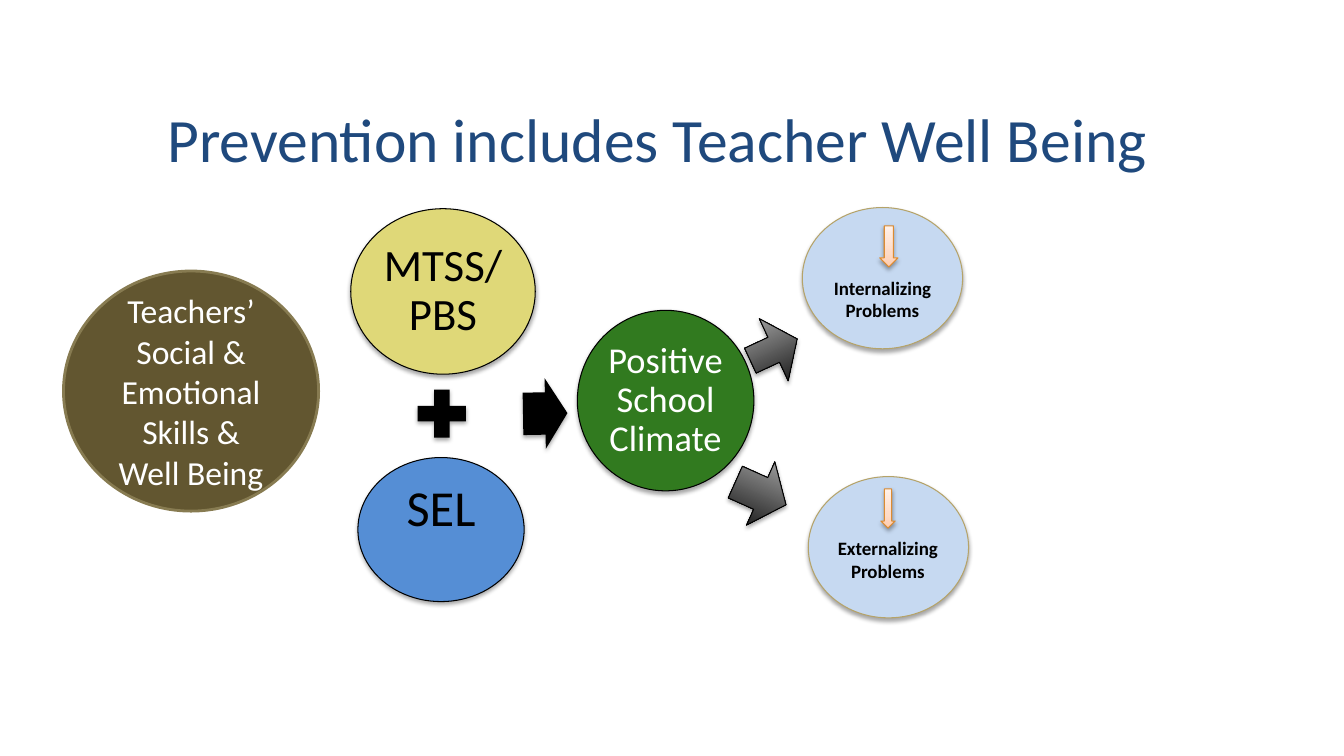
"""Build the slide on prevention and teacher well being."""
import copy

import pptx
import pptx.dml.color
import pptx.enum.shapes
import pptx.enum.text
import pptx.oxml
import pptx.oxml.ns
import pptx.util

Cm = pptx.util.Cm
Pt = pptx.util.Pt
RGB = pptx.dml.color.RGBColor
KIND = pptx.enum.shapes.MSO_SHAPE
ANCHOR = pptx.enum.text.MSO_ANCHOR
CENTER = pptx.enum.text.PP_ALIGN.CENTER

NAVY = RGB(0x1F, 0x49, 0x7D)
BLACK = RGB(0, 0, 0)
WHITE = RGB(255, 255, 255)
GREY = RGB(0xBD, 0xBD, 0xBD)
YELLOW = RGB(0xDF, 0xD8, 0x78)
BLUE = RGB(0x55, 0x8E, 0xD5)
GREEN = RGB(0x31, 0x7A, 0x1F)
PALE = RGB(0xC6, 0xD9, 0xF1)
SAND = RGB(0xB5, 0xA3, 0x69)
BROWN = RGB(0x62, 0x56, 0x30)
KHAKI = RGB(0x87, 0x7B, 0x51)
ORANGE = RGB(0xDC, 0x8B, 0x31)
SMOKE = [(0, BLACK), (1, GREY)]
PEACH = [(0, RGB(0xFF, 0xCC, 0xAF)), (0.35, RGB(0xFF, 0xDB, 0xC6)),
         (1, RGB(0xFF, 0xF1, 0xE9))]
SHADOW = (
    f'<a:outerShdw {pptx.oxml.ns.nsdecls("a")} blurRad="39370" dist="22860" '
    'dir="5400000" rotWithShape="0"><a:srgbClr val="000000">'
    '<a:alpha val="35000"/></a:srgbClr></a:outerShdw>')


def draw(kind, box, fill, line=None, width=0.75, shade=True):
    shape = slide.shapes.add_shape(kind, *map(Cm, box))
    if isinstance(fill, list):
        shape.fill.gradient()
        shape.fill.gradient_angle = 90
        stops = shape._element.spPr.find(".//" + pptx.oxml.ns.qn("a:gsLst"))
        for _ in fill[2:]:
            stops.append(copy.deepcopy(stops[-1]))
        for stop, (place, color) in zip(shape.fill.gradient_stops, fill):
            stop.position = place
            stop.color.rgb = color
    else:
        shape.fill.solid()
        shape.fill.fore_color.rgb = fill
    if line is None:
        shape.line.fill.background()
    else:
        shape.line.color.rgb = line
        shape.line.width = Pt(width)
    shape.shadow.inherit = False
    if shade:
        effect = shape._element.spPr.find(pptx.oxml.ns.qn("a:effectLst"))
        effect.append(pptx.oxml.parse_xml(SHADOW))
    return shape


def write(shape, text, size, color, inset=0.25, space=1.0, bold=False):
    frame = shape.text_frame
    frame.word_wrap = True
    frame.margin_left = frame.margin_right = Cm(inset)
    frame.margin_top = frame.margin_bottom = Cm(min(inset, 0.13))
    frame.text = text
    para = frame.paragraphs[0]
    para.alignment = CENTER
    para.line_spacing = space
    para.font.size = Pt(size)
    para.font.name = "Calibri"
    para.font.bold = bold
    para.font.color.rgb = color
    return frame


deck = pptx.Presentation()
deck.slide_width = Cm(33.87)
deck.slide_height = Cm(19.05)
slide = deck.slides.add_slide(deck.slide_layouts[5])

title = slide.shapes.title
title.left, title.top, title.width, title.height = map(
    Cm, (1.6, 1.63, 29.95, 3.68))
write(title, "Prevention includes Teacher Well Being", 44, NAVY)
title.text_frame.vertical_anchor = ANCHOR.MIDDLE

causes = [
    ("MTSS/PBS", (8.84, 5.26, 4.65, 4.17), YELLOW, BLACK, 32, ANCHOR.MIDDLE),
    ("SEL", (9.02, 11.53, 4.19, 3.63), BLUE, BLACK, 36, ANCHOR.TOP),
    ("Positive School Climate", (14.55, 7.82, 4.45, 4.55), GREEN, WHITE, 26,
     ANCHOR.MIDDLE),
]
for text, box, fill, color, size, anchor in causes:
    oval = draw(KIND.OVAL, box, fill, BLACK)
    write(oval, text, size, color, inset=0.1, space=0.9)
    oval.text_frame.vertical_anchor = anchor

draw(KIND.MATH_PLUS, (10.31, 9.6, 1.65, 1.65), BLACK)

arrows = [
    ((13.18, 9.53, 1.12, 1.78), 359, 0.6, BLACK, None),
    ((18.85, 7.95, 1.3, 1.73), 335.1, 0.4, SMOKE, BLACK),
    ((18.47, 11.56, 1.4, 1.75), 24.1, 0.5, SMOKE, BLACK),
]
for box, angle, shaft, fill, line in arrows:
    arrow = draw(KIND.RIGHT_ARROW, box, fill, line)
    arrow.rotation = angle
    arrow.adjustments[0] = shaft

effects = [
    ("Internalizing Problems", (20.22, 5.23), (22.17, 5.69, 0.46, 1.04),
     (20.73, 6.83, 3.02, 1.42)),
    ("Externalizing Problems", (20.37, 12.01), (22.2, 12.32, 0.36, 0.99),
     (20.8, 13.39, 3.15, 1.42)),
]
for text, corner, drop, place in effects:
    draw(KIND.OVAL, (*corner, 4.04, 3.56), PALE, SAND)
    draw(KIND.DOWN_ARROW, drop, PEACH, ORANGE)
    label = slide.shapes.add_textbox(*map(Cm, place))
    frame = write(label, text, 13.5, BLACK, bold=True)
    frame.auto_size = pptx.enum.text.MSO_AUTO_SIZE.SHAPE_TO_FIT_TEXT

teacher = draw(KIND.OVAL, (1.6, 6.83, 6.43, 6.05), BROWN, KHAKI, 2, False)
write(teacher, "Teachers’ Social & Emotional Skills & Well Being", 24, WHITE)
teacher.text_frame.vertical_anchor = ANCHOR.MIDDLE

deck.save("out.pptx")
